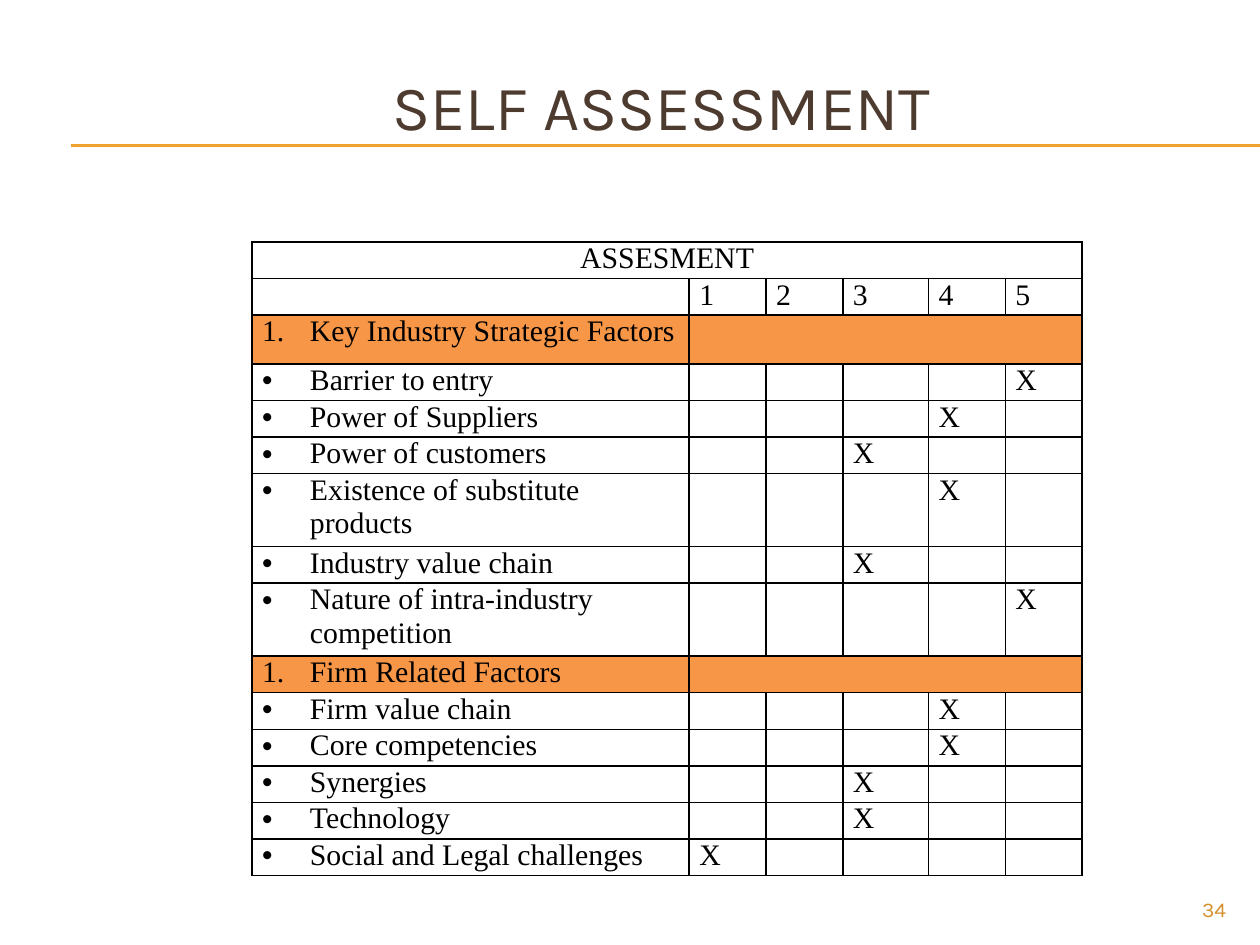
from lxml import etree
from pptx import Presentation
from pptx.dml.color import RGBColor
from pptx.enum import shapes, text
from pptx.oxml import ns
from pptx.util import Inches, Pt

BLACK, ORANGE, GOLD = "000000", "F79646", "F0A22E"
TABLE_FONT = {"name": "Times New Roman", "size": Pt(17)}
COLUMN_WIDTHS = [3.47, 0.61, 0.61, 0.68, 0.61, 0.61]
ROW_HEIGHT = 0.29
# Each group: heading, heading row height, factors with their score
GROUPS = [
    ("Key Industry Strategic Factors", 0.39, [
        ("Barrier to entry", 5),
        ("Power of Suppliers", 4),
        ("Power of customers", 3),
        ("Existence of substitute products", 4),
        ("Industry value chain", 3),
        ("Nature of intra-industry competition", 5),
    ]),
    ("Firm Related Factors", ROW_HEIGHT, [
        ("Firm value chain", 4),
        ("Core competencies", 4),
        ("Synergies", 3),
        ("Technology", 3),
        ("Social and Legal challenges", 1),
    ]),
]
TWO_LINE_FACTORS = {"Existence of substitute products",
                    "Nature of intra-industry competition"}


def colour(value):
    return RGBColor.from_string(value)


def add_xml(parent, tag, **attributes):
    return etree.SubElement(parent, ns.qn(tag), attributes)


def apply(target, values):
    for name, value in values.items():
        setattr(target, name, value)


def write(frame, words, font, hue, align):
    para = frame.paragraphs[0]
    para.alignment = align
    span = para.add_run()
    span.text = words
    apply(span.font, font)
    span.font.color.rgb = colour(hue)
    return para


def add_rule(page, left, top, right):
    rule = page.shapes.add_connector(
        shapes.MSO_CONNECTOR.STRAIGHT,
        Inches(left), Inches(top), Inches(right), Inches(top))
    rule.line.color.rgb = colour(GOLD)
    rule.line.width = Pt(0.75)
    add_xml(rule._element.spPr, "a:effectLst")


def add_title(page, left, top, width, height):
    title = page.shapes.title
    apply(title, {"left": Inches(left), "top": Inches(top),
                  "width": Inches(width), "height": Inches(height)})
    apply(title.text_frame, {"word_wrap": True,
                             "vertical_anchor": text.MSO_ANCHOR.MIDDLE})
    write(title.text_frame, "SELF ASSESSMENT",
          {"name": "Karla", "size": Pt(36)}, "4E3B30", text.PP_ALIGN.CENTER)


def add_page_number(page, left, top, width, height):
    box = page.shapes.add_textbox(
        Inches(left), Inches(top), Inches(width), Inches(height))
    apply(box.text_frame, {"word_wrap": True,
                           "vertical_anchor": text.MSO_ANCHOR.MIDDLE})
    write(box.text_frame, "34", {"name": "Karla", "size": Pt(12)},
          "D48F29", text.PP_ALIGN.RIGHT)


def format_cell(cell, fill=None):
    """Set margins, black borders, fill and the height of an empty line."""
    apply(cell, {"margin_left": Inches(0.08), "margin_right": Inches(0.08),
                 "margin_top": 0, "margin_bottom": 0})
    properties = cell._tc.get_or_add_tcPr()
    for side in ("a:lnL", "a:lnR", "a:lnT", "a:lnB"):
        border = add_xml(properties, side, w=str(Pt(1)))
        add_xml(add_xml(border, "a:solidFill"), "a:srgbClr", val=BLACK)
    if fill:
        cell.fill.solid()
        cell.fill.fore_color.rgb = colour(fill)
    else:
        cell.fill.background()
    add_xml(cell.text_frame.paragraphs[0]._p, "a:endParaRPr", sz="1700")


def write_cell(cell, words, align=text.PP_ALIGN.LEFT):
    para_end = cell.text_frame.paragraphs[0]._p
    para_end.remove(para_end[-1])
    return write(cell.text_frame, words, TABLE_FONT, BLACK, align)


def write_listed(cell, words, numbered=False):
    properties = write_cell(cell, words)._p.get_or_add_pPr()
    properties.set("marL", str(Inches(0.38)))
    properties.set("indent", str(-Inches(0.38)))
    if numbered:
        add_xml(properties, "a:buFont", typeface="Times New Roman")
        add_xml(properties, "a:buAutoNum", type="arabicPeriod")
    else:
        add_xml(properties, "a:buFont", typeface="Arial")
        add_xml(properties, "a:buChar", char="•")


def table_rows():
    """Flatten the groups to (label, score, height); headings have no score."""
    for heading, height, factors in GROUPS:
        yield heading, None, height
        for factor, score in factors:
            lines = 2 if factor in TWO_LINE_FACTORS else 1
            yield factor, score, lines * ROW_HEIGHT


def add_assessment(page, left, top):
    rows = list(table_rows())
    heights = [ROW_HEIGHT, ROW_HEIGHT] + [height for _, _, height in rows]
    table = page.shapes.add_table(
        len(heights), len(COLUMN_WIDTHS), Inches(left), Inches(top),
        Inches(sum(COLUMN_WIDTHS)), Inches(sum(heights))).table
    apply(table, {"first_row": False, "horz_banding": False})
    for column, width in zip(table.columns, COLUMN_WIDTHS):
        column.width = Inches(width)
    for row, height in zip(table.rows, heights):
        row.height = Inches(height)

    last = len(COLUMN_WIDTHS) - 1
    fills = [None, None] + [ORANGE if score is None else None
                            for _, score, _ in rows]
    for row, fill in zip(table.rows, fills):
        for cell in row.cells:
            format_cell(cell, fill)

    table.cell(0, 0).merge(table.cell(0, last))
    write_cell(table.cell(0, 0), "ASSESMENT", text.PP_ALIGN.CENTER)
    for score in range(1, last + 1):
        write_cell(table.cell(1, score), str(score))
    for index, (label, score, _) in enumerate(rows, start=2):
        write_listed(table.cell(index, 0), label, numbered=score is None)
        if score is None:
            table.cell(index, 1).merge(table.cell(index, last))
        else:
            write_cell(table.cell(index, score), "X")


def main():
    deck = Presentation()
    deck.slide_width, deck.slide_height = Inches(10), Inches(7.5)
    page = deck.slides.add_slide(deck.slide_layouts.get_by_name("Title Only"))
    for top in (1.15, 1.16):
        add_rule(page, 0.56, top, 10)
    add_assessment(page, 2, 1.92)
    add_page_number(page, 9, 7.08, 0.83, 0.27)
    add_title(page, 0.5, 0.5, 9.5, 0.67)
    deck.save("out.pptx")


if __name__ == "__main__":
    main()
